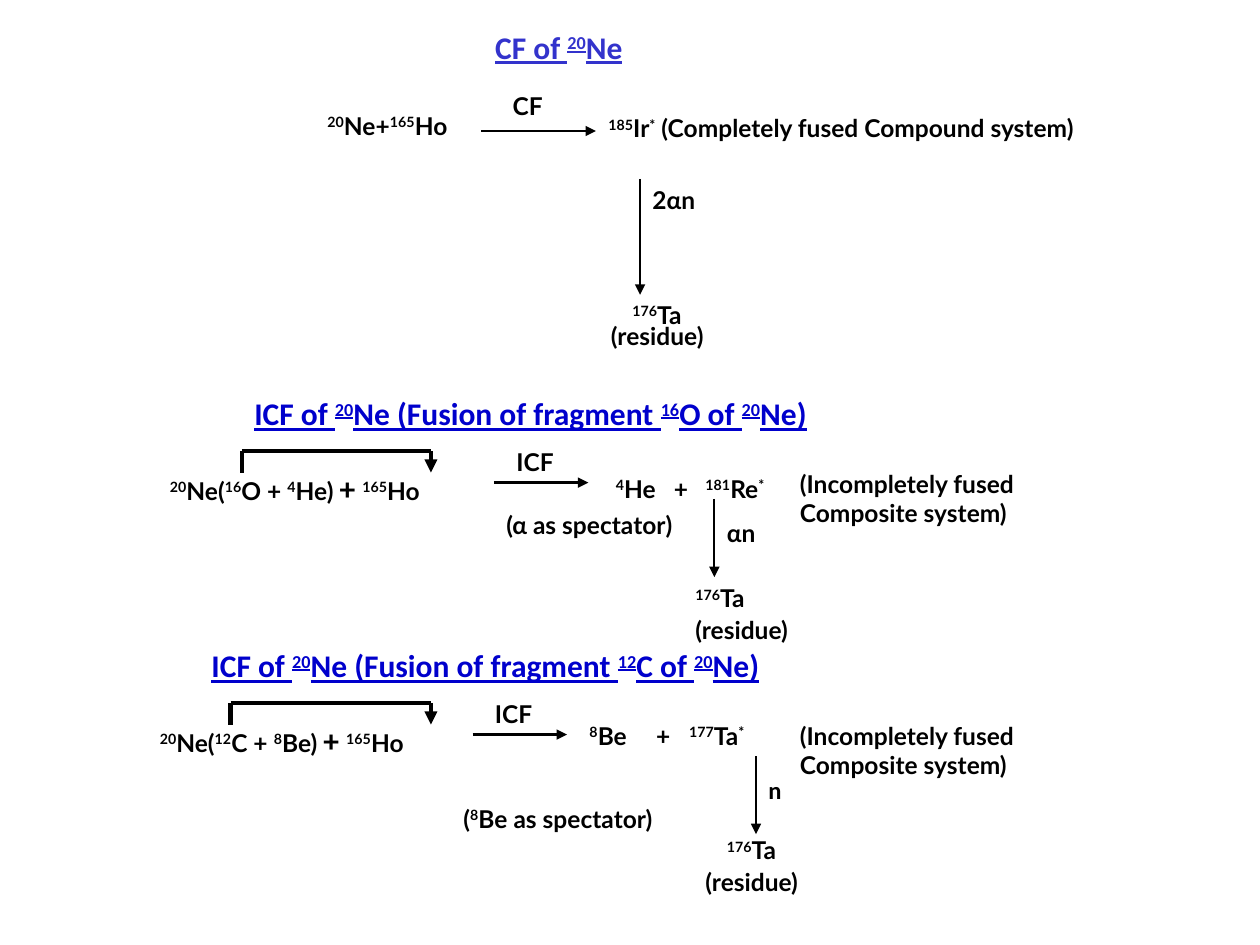
from dataclasses import dataclass

import lxml.etree
import pptx
import pptx.dml.color
import pptx.enum.shapes
import pptx.enum.text
import pptx.oxml.ns
import pptx.util

Inches = pptx.util.Inches
qn = pptx.oxml.ns.qn


@dataclass(frozen=True)
class Theme:
    ink: str = "000000"
    main_heading: str = "3333CC"
    heading: str = "0000CC"
    body_font: str = "Lato"
    heading_font: str = "Calibri"
    body_size: float = 14
    heading_size: float = 18
    arrow_width: float = 1.25
    bracket_width: float = 2.5


@dataclass(frozen=True)
class Channel:
    top: float
    heading: str
    heading_left: float
    beam: str
    beam_left: float
    bracket_left: float
    fusion_left: float
    fusion_arrow_left: float
    products: str
    products_at: tuple
    product_tabs: tuple
    spectator: str
    spectator_at: tuple
    decay: str
    decay_font: str
    decay_at: tuple
    residue_left: float
    residue_name_left: float


def write(paragraph, text, *, font, size, color, bold=True, underline=False):
    for index, piece in enumerate(text.split("^")):
        if not piece:
            continue
        run = paragraph.add_run()
        run.text = piece
        run.font.name = font
        run.font.size = pptx.util.Pt(size)
        run.font.bold = bold
        run.font.underline = underline
        run.font.color.rgb = pptx.dml.color.RGBColor.from_string(color)
        if index % 2:
            run.font._element.set("baseline", "30000")


class ReactionSlide:
    def __init__(self, slide, theme):
        self.slide = slide
        self.theme = theme

    def label(self, left, top, width, height, *parts, tabs=()):
        box = self.slide.shapes.add_textbox(*map(Inches, (left, top, width, height)))
        box.text_frame.word_wrap = True
        paragraph = box.text_frame.paragraphs[0]
        if tabs:
            stops = lxml.etree.SubElement(paragraph._p.get_or_add_pPr(), qn("a:tabLst"))
            for position in tabs:
                lxml.etree.SubElement(stops, qn("a:tab"), pos=str(Inches(position)), algn="l")
        for part in parts:
            text, style = part if isinstance(part, tuple) else (part, {})
            defaults = dict(font=self.theme.body_font, size=self.theme.body_size, color=self.theme.ink)
            write(paragraph, text, **(defaults | style))

    def heading(self, left, top, width, text, color, placeholder=None):
        area = tuple(map(Inches, (left, top, width, 0.4)))
        holder = placeholder or self.slide.shapes.add_textbox(*area)
        holder.left, holder.top, holder.width, holder.height = area
        frame = holder.text_frame
        frame.word_wrap = False
        frame.auto_size = pptx.enum.text.MSO_AUTO_SIZE.SHAPE_TO_FIT_TEXT
        frame.vertical_anchor = pptx.enum.text.MSO_ANCHOR.MIDDLE
        paragraph = frame.paragraphs[0]
        paragraph.alignment = pptx.enum.text.PP_ALIGN.JUSTIFY
        write(paragraph, text, font=self.theme.heading_font, size=self.theme.heading_size,
              color=color, underline=True)

    def line(self, start, end, width, arrow=False):
        connector = self.slide.shapes.add_connector(
            pptx.enum.shapes.MSO_CONNECTOR.STRAIGHT, *map(Inches, (*start, *end)))
        connector.line.width = pptx.util.Pt(width)
        connector.line.color.rgb = pptx.dml.color.RGBColor.from_string(self.theme.ink)
        if arrow:
            lxml.etree.SubElement(connector.line._get_or_add_ln(), qn("a:tailEnd"), type="triangle")
        lxml.etree.SubElement(connector._element.spPr, qn("a:effectLst"))

    def arrow(self, start, end):
        self.line(start, end, self.theme.arrow_width, arrow=True)

    def bracket(self, left, right, top, depth):
        width = self.theme.bracket_width
        self.line((left, top + depth), (left, top), width)
        self.line((left, top), (right, top), width)
        self.line((right, top), (right, top + depth), width, arrow=True)

    def complete_fusion(self):
        self.heading(3.83, 0.17, 1.91, "CF of ^20^Ne", self.theme.main_heading,
                     self.slide.shapes.title)
        self.label(2.5, 0.83, 1.48, 0.37, "^20^Ne+^165^Ho")
        self.label(3.97, 0.67, 0.61, 0.37, "CF")
        self.arrow((3.82, 1.04), (4.73, 1.04))
        self.label(4.73, 0.85, 4.44, 0.55, "^185^Ir^*^ (Completely fused Compound system)")
        self.arrow((5.08, 1.42), (5.08, 2.34))
        self.label(5.08, 1.42, 0.61, 0.55, "2αn")
        self.label(4.92, 2.33, 0.76, 0.37, "^176^Ta")
        self.label(4.75, 2.5, 1.28, 0.55, "(residue)")

    def incomplete_fusion(self, channel):
        top = channel.top
        plus = ("+ ", dict(font=self.theme.heading_font, size=self.theme.heading_size))
        decay_left, decay_top = channel.decay_at
        self.heading(channel.heading_left, top, 5.85, channel.heading, self.theme.heading)
        self.bracket(channel.bracket_left, 3.42, top + 0.5, 0.17)
        self.label(channel.beam_left, top + 0.59, 2.8, 0.42, channel.beam, plus, "^165^Ho")
        self.label(channel.fusion_left, top + 0.42, 0.75, 0.25, "ICF")
        self.arrow((channel.fusion_arrow_left, top + 0.75),
                   (channel.fusion_arrow_left + 0.75, top + 0.75))
        self.label(*channel.products_at, 1.75, 0.38, channel.products, tabs=channel.product_tabs)
        self.label(6.25, top + 0.59, 2.25, 0.88, "(Incompletely fused Composite system)")
        self.label(*channel.spectator_at, 2, 0.42, channel.spectator)
        self.arrow((decay_left, decay_top), (decay_left, decay_top + 0.62))
        self.label(decay_left, decay_top + 0.1, 0.5, 0.38,
                   (channel.decay, dict(font=channel.decay_font)))
        self.label(channel.residue_name_left, top + 1.5, 0.75, 0.3, "^176^Ta")
        self.label(channel.residue_left, top + 1.75, 1.2, 0.4, "(residue)")


def main():
    theme = Theme()
    channels = (
        Channel(
            top=3.08, heading="ICF of ^20^Ne (Fusion of fragment ^16^O of ^20^Ne)",
            heading_left=1.92, beam="^20^Ne(^16^O + ^4^He) ", beam_left=1.25,
            bracket_left=1.92, fusion_left=4, fusion_arrow_left=3.92,
            products="^4^He\t+\t^181^Re^*", products_at=(4.79, 3.71), product_tabs=(0.46, 0.71),
            spectator="(α as spectator)", spectator_at=(3.92, 4),
            decay="αn", decay_font=theme.body_font, decay_at=(5.67, 3.96),
            residue_left=5.42, residue_name_left=5.42),
        Channel(
            top=5.08, heading="ICF of ^20^Ne (Fusion of fragment ^12^C of ^20^Ne)",
            heading_left=1.58, beam="^20^Ne(^12^C + ^8^Be) ", beam_left=1.17,
            bracket_left=1.83, fusion_left=3.83, fusion_arrow_left=3.75,
            products="^8^Be\t+\t^177^Ta^*", products_at=(4.58, 5.67), product_tabs=(0.53, 0.79),
            spectator="(^8^Be as spectator)", spectator_at=(3.58, 6.33),
            decay="n", decay_font=theme.heading_font, decay_at=(6, 6),
            residue_left=5.5, residue_name_left=5.67),
    )
    presentation = pptx.Presentation()
    presentation.slide_width, presentation.slide_height = Inches(10), Inches(7.5)
    title_only = presentation.slide_layouts[5]
    reactions = ReactionSlide(presentation.slides.add_slide(title_only), theme)
    reactions.complete_fusion()
    for channel in channels:
        reactions.incomplete_fusion(channel)
    presentation.save("out.pptx")


if __name__ == "__main__":
    main()
